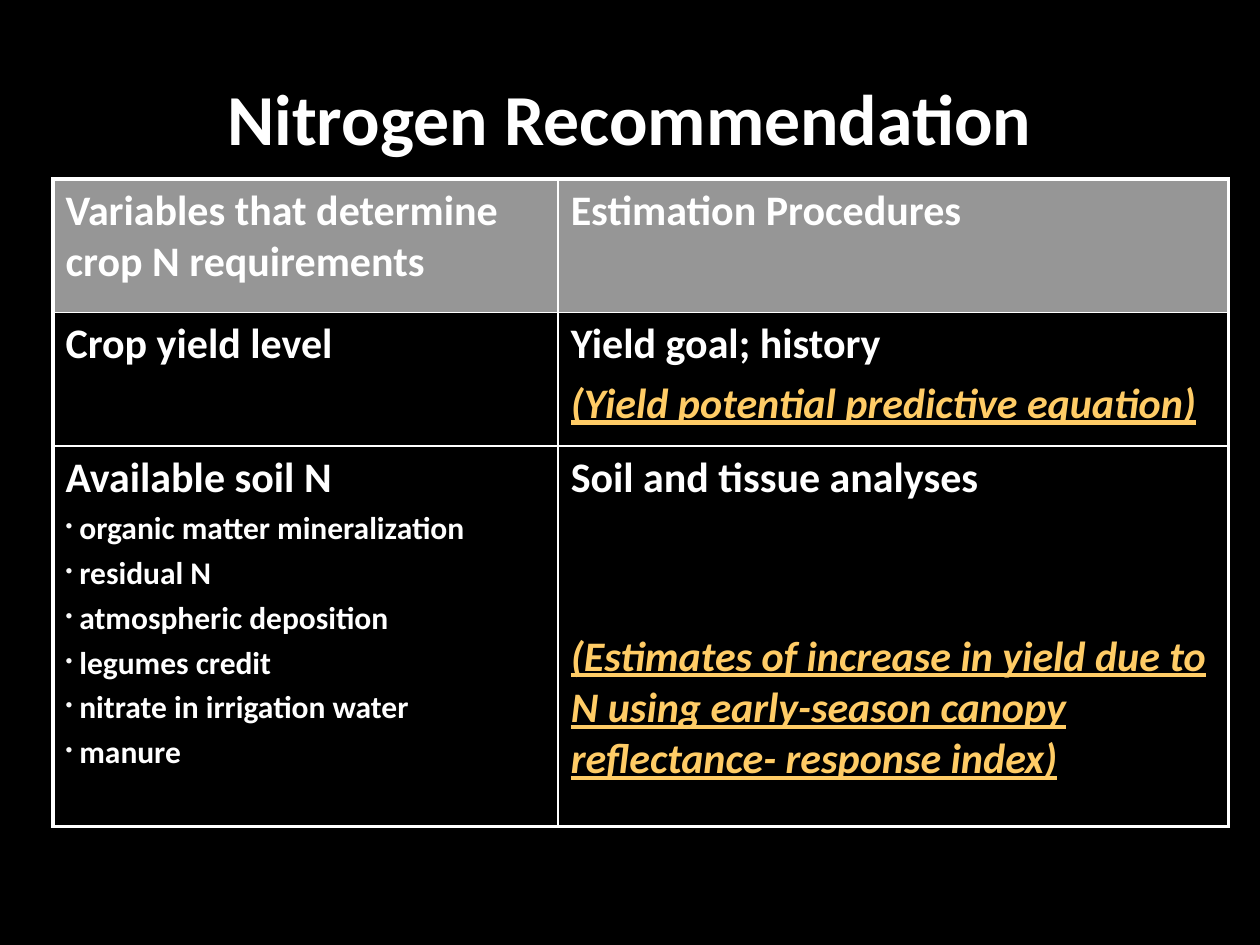
import pptx
import pptx.dml.color
import pptx.enum.text
import pptx.oxml
import pptx.oxml.ns
import pptx.util
from pptx.util import Inches

WHITE, GOLD, GRAY, BLACK = "FFFFFF", "FFCC66", "969696", "000000"
NS = pptx.oxml.ns.nsdecls("a")
PLAIN = dict(name="Calibri", bold=True, size=pptx.util.Pt(24))
EMPHASIS = dict(PLAIN, italic=True, underline=True)
SMALL = dict(PLAIN, size=pptx.util.Pt(18))
HEADING = dict(PLAIN, size=pptx.util.Pt(41))

# Each cell is a list of (text, format, colour, space before in points)
SOURCES = ["organic matter mineralization", "residual N", "atmospheric deposition",
           "legumes credit", "nitrate in irrigation water", "manure"]
ROWS = [
    [[("Variables that determine crop N requirements", PLAIN, WHITE, 0)],
     [("Estimation Procedures", PLAIN, WHITE, 0)]],
    [[("Crop yield level", PLAIN, WHITE, 0)],
     [("Yield goal; history", PLAIN, WHITE, 0),
      ("(Yield potential predictive equation)", EMPHASIS, GOLD, 4.8)]],
    [[("Available soil N", PLAIN, WHITE, 0)]
     + [(source, SMALL, WHITE, 3.6) for source in SOURCES],
     [("Soil and tissue analyses", PLAIN, WHITE, 0),
      ("(Estimates of increase in yield due to N using early-season canopy "
       "reflectance- response index)", EMPHASIS, GOLD, 73)]],
]


def rgb(value):
    return pptx.dml.color.RGBColor.from_string(value)


def add_run(p, text, style, color):
    r = p.add_run()
    r.text = text
    for key, value in style.items():
        setattr(r.font, key, value)
    r.font.color.rgb = rgb(color)


def add_bullet(p):
    pPr = p._p.get_or_add_pPr()
    indent = Inches(0.11)
    pPr.set("marL", str(indent))
    pPr.set("indent", str(-indent))
    for xml in (f'<a:buClr {NS}><a:srgbClr val="F9F9F9"/></a:buClr>',
                f'<a:buSzPct {NS} val="65000"/>',
                f'<a:buChar {NS} char="•"/>'):
        pPr.append(pptx.oxml.parse_xml(xml))


def set_borders(cell, widths):
    tcPr = cell._tc.get_or_add_tcPr()
    for i, (side, width) in enumerate(widths.items()):
        tcPr.insert(i, pptx.oxml.parse_xml(
            f'<a:ln{side} {NS} w="{pptx.util.Pt(width)}"><a:solidFill>'
            f'<a:srgbClr val="{WHITE}"/></a:solidFill></a:ln{side}>'))


def fill_cell(cell, paragraphs):
    tf = cell.text_frame
    for i, (text, style, color, gap) in enumerate(paragraphs):
        p = tf.add_paragraph() if i else tf.paragraphs[0]
        p.space_before = pptx.util.Pt(gap)
        add_run(p, text, style, color)
        if style is SMALL:
            add_bullet(p)


def place_title(s, text, left, top, width, height):
    sp = s.shapes.title
    sp.left, sp.top, sp.width, sp.height = left, top, width, height
    tf = sp.text_frame
    tf.word_wrap = True
    tf.vertical_anchor = pptx.enum.text.MSO_ANCHOR.MIDDLE
    p = tf.paragraphs[0]
    p.alignment = pptx.enum.text.PP_ALIGN.CENTER
    add_run(p, text, HEADING, WHITE)


def place_table(s, left, top, width, height):
    table = s.shapes.add_table(len(ROWS), 2, left, top, width, height).table
    for column, size in zip(table.columns, (4.01, 5.32)):
        column.width = Inches(size)
    for row, size in zip(table.rows, (1.06, 1.06, 3.02)):
        row.height = Inches(size)

    # Thick outer frame, thin inner rules
    thick, thin, last = 2.25, 1, len(ROWS) - 1
    for i, row in enumerate(ROWS):
        for j, paragraphs in enumerate(row):
            cell = table.cell(i, j)
            cell.fill.solid()
            cell.fill.fore_color.rgb = rgb(BLACK if i else GRAY)
            set_borders(cell, dict(L=thin if j else thick, R=thick if j else thin,
                                   T=thin if i else thick,
                                   B=thick if i == last else thin))
            fill_cell(cell, paragraphs)


def main():
    prs = pptx.Presentation()
    prs.slide_width, prs.slide_height = Inches(10), Inches(7.5)
    s = prs.slides.add_slide(prs.slide_layouts[5])
    s.background.fill.solid()
    s.background.fill.fore_color.rgb = rgb(BLACK)
    place_title(s, "Nitrogen Recommendation",
                Inches(0.5), Inches(0.3), Inches(9), Inches(1.25))
    place_table(s, Inches(0.42), Inches(1.42), Inches(9.33), Inches(5.15))
    prs.save("out.pptx")


if __name__ == "__main__":
    main()
